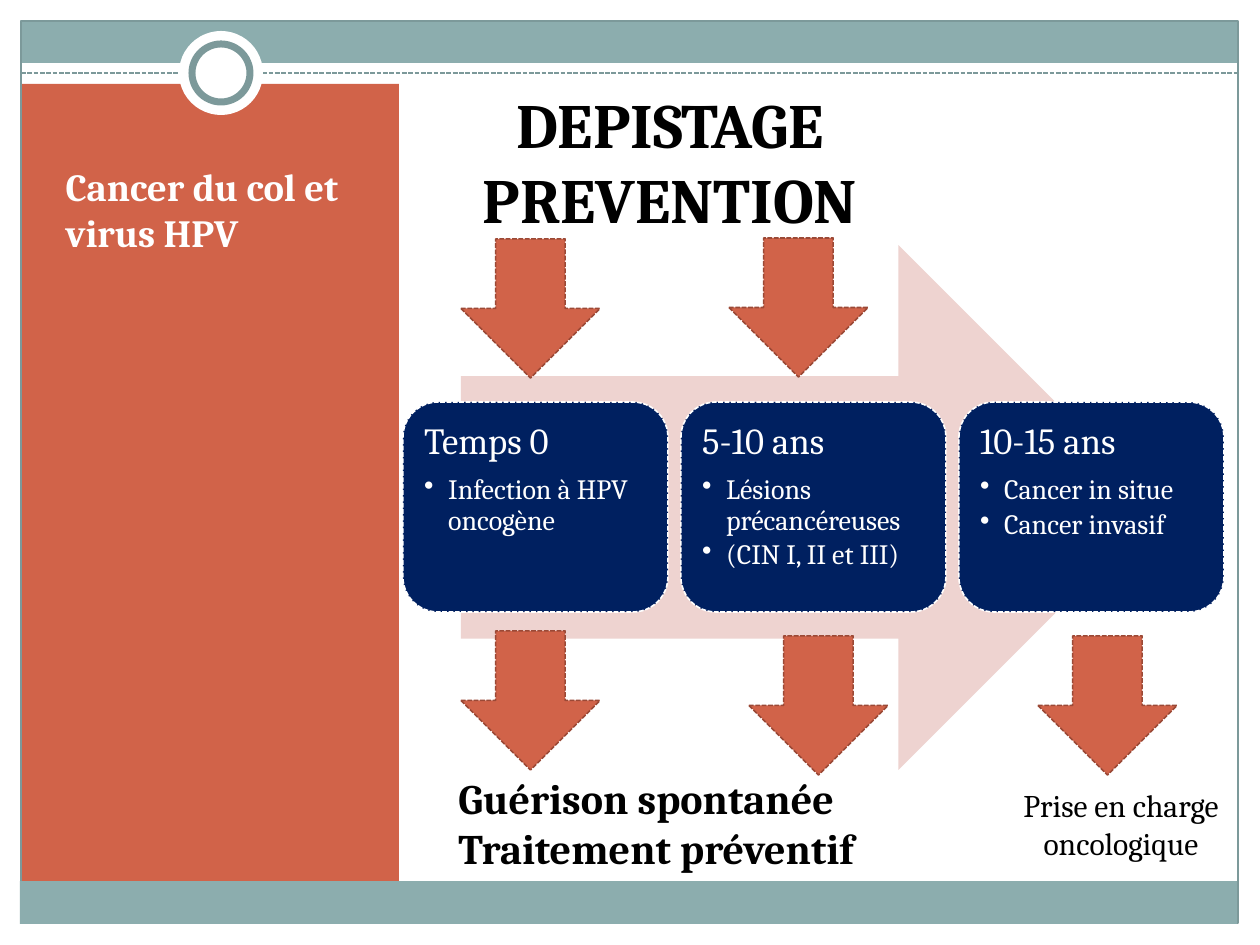
from lxml import etree
from pptx import Presentation
from pptx.dml.color import RGBColor
from pptx.enum import dml, shapes, text
from pptx.oxml import ns
from pptx.util import Pt

PX = 914400 / 126
KIND = shapes.MSO_SHAPE
TEAL, EDGE, RUST, WHITE = "8CADAE", "7C999A", "D16349", "FFFFFF"


def add_block(kind, box, fill=None, line=None, width=0.9, dash=True):
    block = slide.shapes.add_shape(kind, *[round(v * PX) for v in box])
    block.shadow.inherit = False
    if fill:
        block.fill.solid()
        block.fill.fore_color.rgb = RGBColor.from_string(fill)
    else:
        block.fill.background()
    if line:
        block.line.color.rgb = RGBColor.from_string(line)
        block.line.width = Pt(width)
        if dash:
            block.line.dash_style = dml.MSO_LINE.SQUARE_DOT
    else:
        block.line.fill.background()
    return block


def style(paragraph, size, color, bold=False, align=text.PP_ALIGN.LEFT):
    paragraph.alignment = align
    for run in paragraph.runs:
        run.font.name = "Cambria"
        run.font.size = Pt(size)
        run.font.bold = bold
        run.font.color.rgb = RGBColor.from_string(color)


prs = Presentation()
prs.slide_width = round(1260 * PX)
prs.slide_height = round(945 * PX)
slide = prs.slides.add_slide(prs.slide_layouts[5])

for box, fill in [
    ((21, 21, 1217, 42), TEAL),
    ((0, 924, 1260, 21), WHITE),
    ((1239, 0, 21, 945), WHITE),
    ((0, 0, 1260, 16), WHITE),
    ((0, 0, 21, 945), WHITE),
    ((21, 84, 378, 809), RUST),
]:
    add_block(KIND.RECTANGLE, box, fill)
add_block(KIND.RECTANGLE, (21, 21, 1217, 902), None, EDGE, 0.75, False)

rule = slide.shapes.add_connector(
    shapes.MSO_CONNECTOR.STRAIGHT, *[round(v * PX) for v in (21, 73, 1238, 73)])
rule.line.color.rgb = RGBColor.from_string(EDGE)
rule.line.width = Pt(0.9)
rule.line.dash_style = dml.MSO_LINE.SQUARE_DOT
etree.SubElement(rule.element.spPr, ns.qn("a:effectLst"))

add_block(KIND.OVAL, (179, 31, 84, 84), WHITE)
add_block(KIND.OVAL, (192, 44, 58, 58), WHITE, EDGE, 4, False)
add_block(KIND.RECTANGLE, (20, 881, 1217, 43), TEAL)

title = slide.shapes.title
title.left, title.top, title.width, title.height = [
    round(v * PX) for v in (53, 126, 325, 136)]
title.text_frame.text = "Cancer du col et virus HPV"
title.text_frame.word_wrap = True
title.text_frame.auto_size = text.MSO_AUTO_SIZE.NONE
title.text_frame.vertical_anchor = text.MSO_ANCHOR.BOTTOM
style(title.text_frame.paragraphs[0], 22, WHITE, True)
title.element.getparent().append(title.element)

add_block(KIND.RIGHT_ARROW, (461, 245, 700, 525), "EED3D0")

stages = [
    ("Temps 0", "Infection à HPV oncogène"),
    ("5-10 ans", "Lésions précancéreuses", "(CIN I, II et III)"),
    ("10-15 ans", "Cancer in situe", "Cancer invasif"),
]
for column, stage in enumerate(stages):
    card = add_block(KIND.ROUNDED_RECTANGLE,
                     (403 + 278 * column, 402, 265, 210), "002060", WHITE)
    frame = card.text_frame
    frame.text = "\n".join(stage)
    frame.word_wrap = True
    frame.vertical_anchor = text.MSO_ANCHOR.TOP
    frame.margin_left = frame.margin_right = round(11 * PX)
    frame.margin_top = frame.margin_bottom = round(11 * PX)
    for row, paragraph in enumerate(frame.paragraphs):
        style(paragraph, 16 if row else 21, WHITE)
        paragraph.line_spacing = 0.9
        paragraph.space_after = Pt(2.4 if row else 7.35)
        if row:
            paragraph.level = 1
            props = paragraph._p.get_or_add_pPr()
            props.set("marL", str(round(24 * PX)))
            props.set("indent", str(round(-24 * PX)))
            etree.SubElement(props, ns.qn("a:buChar")).set("char", "•")

for left, top in [(461, 239), (729, 238), (461, 631), (749, 636), (1038, 636)]:
    add_block(KIND.DOWN_ARROW, (left, top, 139, 139), RUST, "9B4936")

captions = [
    ((422, 79, 496, 165), "DEPISTAGE\nPREVENTION", 36, True, text.PP_ALIGN.CENTER),
    ((446, 766, 496, 115), "Guérison spontanée\nTraitement préventif", 24, True,
     text.PP_ALIGN.LEFT),
    ((997, 780, 248, 89), "Prise en charge oncologique", 18, False,
     text.PP_ALIGN.CENTER),
]
for box, wording, size, bold, align in captions:
    caption = slide.shapes.add_textbox(*[round(v * PX) for v in box]).text_frame
    caption.text = wording
    caption.word_wrap = True
    caption.auto_size = text.MSO_AUTO_SIZE.SHAPE_TO_FIT_TEXT
    for paragraph in caption.paragraphs:
        style(paragraph, size, "000000", bold, align)

prs.save("out.pptx")
